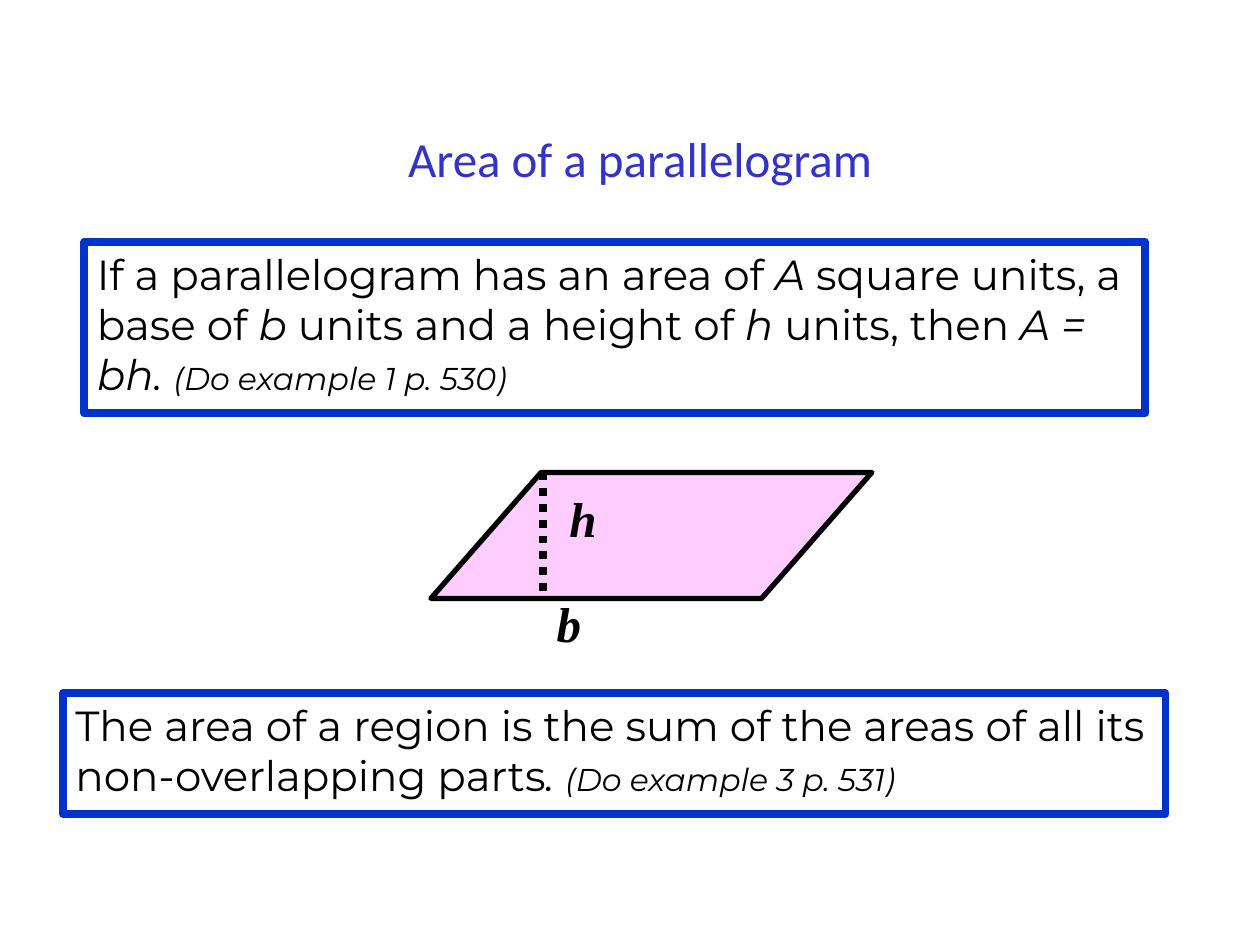
from dataclasses import dataclass

from lxml.etree import SubElement
from pptx import Presentation
from pptx.dml.color import RGBColor
from pptx.enum.dml import MSO_LINE
from pptx.enum.shapes import MSO_CONNECTOR, MSO_SHAPE
from pptx.enum.text import MSO_ANCHOR, MSO_AUTO_SIZE, PP_ALIGN
from pptx.oxml.ns import qn
from pptx.slide import Slide
from pptx.text.text import Font
from pptx.util import Inches, Pt


@dataclass(frozen=True)
class Theme:
    heading: RGBColor = RGBColor(0x33, 0x33, 0xCC)
    border: RGBColor = RGBColor(0x00, 0x33, 0xCC)
    ink: RGBColor = RGBColor(0, 0, 0)
    figure: RGBColor = RGBColor(0xFF, 0xCC, 0xFF)
    heading_font: str = "Calibri"
    body_font: str = "Montserrat"
    symbol_font: str = "Times New Roman"
    large: int = 28
    body: int = 24
    note: int = 18
    heavy: float = 4.5
    outline: float = 3


@dataclass(frozen=True)
class Box:
    left: float
    top: float
    width: float
    height: float

    def lengths(self) -> tuple:
        return tuple(Inches(n) for n in (self.left, self.top, self.width, self.height))


@dataclass(frozen=True)
class Phrase:
    text: str
    italic: bool = False
    size: int = Theme.body


@dataclass(frozen=True)
class Statement:
    box: Box
    phrases: tuple[Phrase, ...]


@dataclass(frozen=True)
class Symbol:
    letter: str
    box: Box


THEME = Theme()
STATEMENTS = (
    Statement(Box(0.67, 1.92, 8.42, 1.36), (
        Phrase("If a parallelogram has an area of "),
        Phrase("A", True),
        Phrase(" square units, a base of "),
        Phrase("b", True),
        Phrase(" units and a height of "),
        Phrase("h", True),
        Phrase(" units, then "),
        Phrase("A = bh. ", True),
        Phrase("(Do example 1 p. 530)", True, THEME.note),
    )),
    Statement(Box(0.5, 5.5, 8.75, 0.96), (
        Phrase("The area of a region is the sum of the areas of all its non-overlapping parts"),
        Phrase(". ", True),
        Phrase("(Do example 3 p. 531)", True, THEME.note),
    )),
)
SYMBOLS = (
    Symbol("b", Box(4.32, 4.66, 0.4, 0.57)),
    Symbol("h", Box(4.42, 3.83, 0.42, 0.57)),
)
PARALLELOGRAM = Box(3.42, 3.75, 3.5, 1)
HEIGHT_X = 4.31


def style_font(font: Font, name: str, size: int, color: RGBColor) -> None:
    """Set the typeface, size and colour of a font."""
    font.name = name
    font.size = Pt(size)
    font.color.rgb = color


def draw_title(slide: Slide, text: str, box: Box) -> None:
    """Place and format the slide title."""
    title = slide.shapes.title
    title.left, title.top, title.width, title.height = box.lengths()
    frame = title.text_frame
    frame.text = text
    frame.vertical_anchor = MSO_ANCHOR.MIDDLE
    paragraph = frame.paragraphs[0]
    paragraph.alignment = PP_ALIGN.CENTER
    style_font(paragraph.runs[0].font, THEME.heading_font, THEME.large, THEME.heading)


def draw_statement(slide: Slide, statement: Statement) -> None:
    """Draw a bordered box holding a statement in mixed styles."""
    panel = slide.shapes.add_shape(MSO_SHAPE.RECTANGLE, *statement.box.lengths())
    panel.shadow.inherit = False
    panel.fill.background()
    panel.line.color.rgb = THEME.border
    panel.line.width = Pt(THEME.heavy)
    frame = panel.text_frame
    frame.word_wrap = True
    frame.auto_size = MSO_AUTO_SIZE.SHAPE_TO_FIT_TEXT
    frame.vertical_anchor = MSO_ANCHOR.TOP
    paragraph = frame.paragraphs[0]
    paragraph.alignment = PP_ALIGN.LEFT
    for phrase in statement.phrases:
        run = paragraph.add_run()
        run.text = phrase.text
        run.font.italic = phrase.italic
        style_font(run.font, THEME.body_font, phrase.size, THEME.ink)


def draw_parallelogram(slide: Slide, box: Box) -> None:
    """Draw the filled parallelogram."""
    figure = slide.shapes.add_shape(MSO_SHAPE.PARALLELOGRAM, *box.lengths())
    figure.adjustments[0] = 0.875
    figure.shadow.inherit = False
    figure.fill.solid()
    figure.fill.fore_color.rgb = THEME.figure
    figure.line.color.rgb = THEME.ink
    figure.line.width = Pt(THEME.outline)


def draw_height(slide: Slide, x: float, box: Box) -> None:
    """Draw the dotted height from the top to the base of the figure."""
    height = slide.shapes.add_connector(
        MSO_CONNECTOR.STRAIGHT,
        Inches(x), Inches(box.top), Inches(x), Inches(box.top + box.height),
    )
    height.line.color.rgb = THEME.ink
    height.line.width = Pt(THEME.heavy)
    height.line.dash_style = MSO_LINE.ROUND_DOT
    SubElement(height._element.spPr, qn("a:effectLst"))


def draw_symbol(slide: Slide, symbol: Symbol) -> None:
    """Write one letter of the formula beside its length."""
    frame = slide.shapes.add_textbox(*symbol.box.lengths()).text_frame
    frame.word_wrap = False
    frame.auto_size = MSO_AUTO_SIZE.SHAPE_TO_FIT_TEXT
    frame.text = symbol.letter
    font = frame.paragraphs[0].runs[0].font
    font.bold = font.italic = True
    style_font(font, THEME.symbol_font, THEME.large, THEME.ink)


def main() -> None:
    """Build and save the slide."""
    presentation = Presentation()
    presentation.slide_width, presentation.slide_height = Inches(10), Inches(7.5)
    slide = presentation.slides.add_slide(presentation.slide_layouts.get_by_name("Title Only"))
    draw_title(slide, "Area of a parallelogram", Box(0.83, 0.92, 8.5, 0.67))
    for statement in STATEMENTS:
        draw_statement(slide, statement)
    draw_parallelogram(slide, PARALLELOGRAM)
    draw_height(slide, HEIGHT_X, PARALLELOGRAM)
    for symbol in SYMBOLS:
        draw_symbol(slide, symbol)
    presentation.save("out.pptx")


if __name__ == "__main__":
    main()
